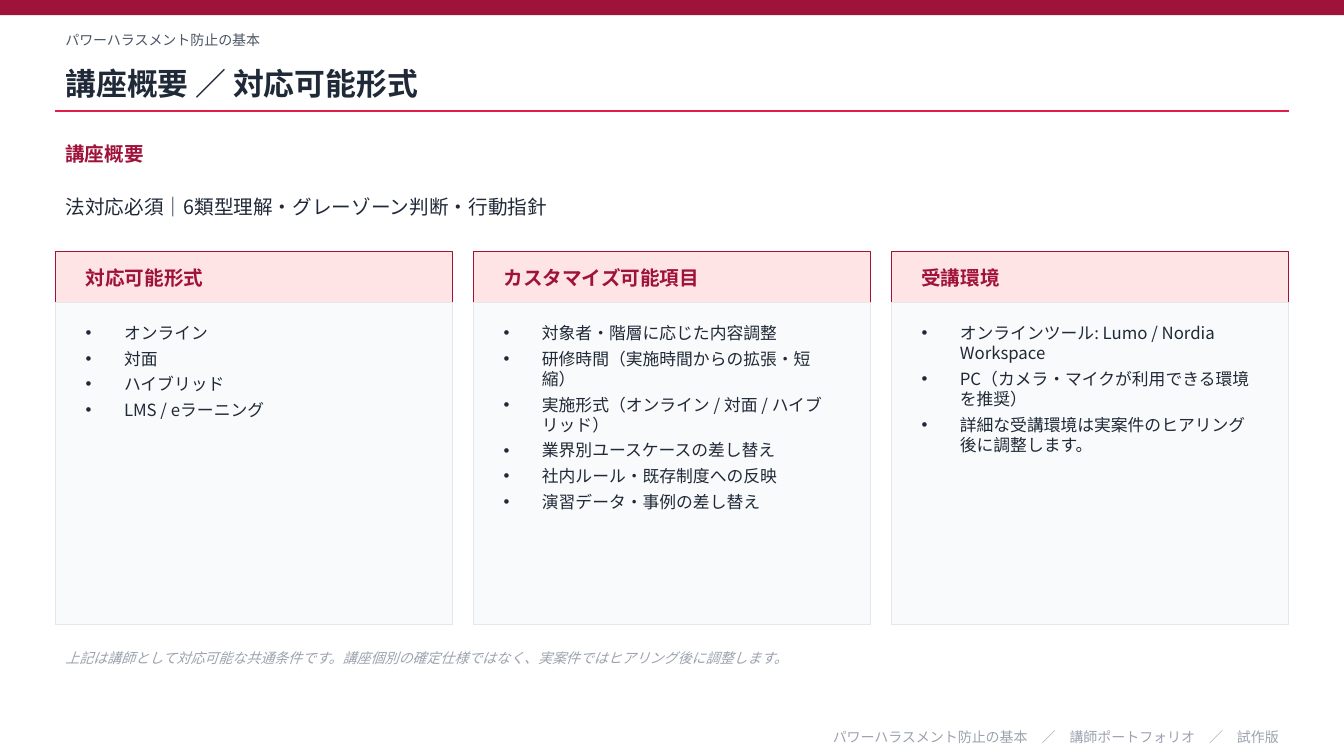
from lxml.etree import SubElement
from pptx import Presentation
from pptx.dml.color import RGBColor
from pptx.enum.shapes import MSO_CONNECTOR as Connector, MSO_SHAPE as Preset
from pptx.enum.text import MSO_ANCHOR as Anchor, MSO_AUTO_SIZE as AutoSize, PP_ALIGN as Align
from pptx.oxml.ns import qn
from pptx.util import Inches, Pt

FONT = "Noto Sans CJK JP"
CRIMSON = RGBColor(0x9F, 0x12, 0x39)
ROSE = RGBColor(0xE1, 0x1D, 0x48)
PINK = RGBColor(0xFF, 0xE4, 0xE6)
INK = RGBColor(0x1F, 0x29, 0x37)
SLATE = RGBColor(0x4B, 0x55, 0x63)
MUTED = RGBColor(0x9C, 0xA3, 0xAF)
PANEL = RGBColor(0xF9, 0xFA, 0xFB)
BORDER = RGBColor(0xE5, 0xE7, 0xEB)

LEFT, WIDTH = 0.55, 12.23
CARD_WIDTH, CARD_GAP, CARD_INSET = 3.94, 0.205, 0.2

presentation = Presentation()
presentation.slide_width = Inches(13.33)
presentation.slide_height = Inches(7.5)
slide = presentation.slides.add_slide(presentation.slide_layouts.get_by_name("Comparison"))
title, overview, *lists = slide.placeholders


def write_text(lines, box, placeholder=None, size=14, color=INK, bold=False, italic=False,
               align=Align.LEFT, anchor=Anchor.MIDDLE, bullets=False):
    left, top, width, height = map(Inches, box)
    if placeholder is None:
        shape = slide.shapes.add_textbox(left, top, width, height)
    else:
        shape = placeholder
        shape.left, shape.top, shape.width, shape.height = left, top, width, height
        shape.element.getparent().append(shape.element)
    frame = shape.text_frame
    frame.text = "\n".join(lines)
    frame.word_wrap = True
    frame.auto_size = AutoSize.NONE
    frame.vertical_anchor = anchor
    for paragraph in frame.paragraphs:
        paragraph.alignment = align
        paragraph.space_before = Pt(0)
        if bullets:
            paragraph.space_after = Pt(4)
            properties = paragraph._p.get_or_add_pPr()
            properties.set("marL", str(Inches(0.38)))
            properties.set("indent", str(Inches(-0.38)))
            SubElement(properties, qn("a:buChar"), char="•")
        for run in paragraph.runs:
            font = run.font
            font.size, font.bold, font.italic = Pt(size), bold, italic
            font.color.rgb = color
            font.name = FONT
            SubElement(run._r.get_or_add_rPr(), qn("a:ea"), typeface=FONT)


def add_block(box, fill, line=None):
    shape = slide.shapes.add_shape(Preset.RECTANGLE, *map(Inches, box))
    shape.shadow.inherit = False
    shape.fill.solid()
    shape.fill.fore_color.rgb = fill
    if line is None:
        shape.line.fill.background()
    else:
        shape.line.color.rgb = line
        shape.line.width = Pt(0.75)


add_block((0, 0, 13.33, 0.15), CRIMSON)
write_text(["パワーハラスメント防止の基本"], (LEFT, 0.25, WIDTH, 0.3), size=10, color=SLATE)
write_text(["講座概要 ／ 対応可能形式"], (LEFT, 0.55, WIDTH, 0.55), placeholder=title, size=22, bold=True)

rule = slide.shapes.add_connector(
    Connector.STRAIGHT, Inches(LEFT), Inches(1.1), Inches(LEFT + WIDTH), Inches(1.1))
rule.line.color.rgb = ROSE
rule.line.width = Pt(1)
SubElement(rule.element.spPr, qn("a:effectLst"))

write_text(["講座概要"], (LEFT, 1.35, WIDTH, 0.35), color=CRIMSON, bold=True)
write_text(["法対応必須｜6類型理解・グレーゾーン判断・行動指針"],
           (LEFT, 1.75, WIDTH, 0.6), placeholder=overview)

cards = [
    ("対応可能形式", ["オンライン", "対面", "ハイブリッド", "LMS / eラーニング"]),
    ("カスタマイズ可能項目", [
        "対象者・階層に応じた内容調整",
        "研修時間（実施時間からの拡張・短縮）",
        "実施形式（オンライン / 対面 / ハイブリッド）",
        "業界別ユースケースの差し替え",
        "社内ルール・既存制度への反映",
        "演習データ・事例の差し替え",
    ]),
    ("受講環境", [
        "オンラインツール: Lumo / Nordia Workspace",
        "PC（カメラ・マイクが利用できる環境を推奨）",
        "詳細な受講環境は実案件のヒアリング後に調整します。",
    ]),
]
for index, ((heading, items), placeholder) in enumerate(zip(cards, lists)):
    card_left = LEFT + index * (CARD_WIDTH + CARD_GAP)
    text_left, text_width = card_left + CARD_INSET, CARD_WIDTH - 2 * CARD_INSET
    add_block((card_left, 2.5, CARD_WIDTH, 0.5), PINK, CRIMSON)
    write_text([heading], (text_left, 2.5, text_width, 0.5), color=CRIMSON, bold=True)
    add_block((card_left, 3, CARD_WIDTH, 3.2), PANEL, BORDER)
    write_text(items, (text_left, 3.15, text_width, 2.85), placeholder=placeholder,
               size=12, anchor=Anchor.TOP, bullets=True)

write_text(["上記は講師として対応可能な共通条件です。講座個別の確定仕様ではなく、実案件ではヒアリング後に調整します。"],
           (LEFT, 6.35, WIDTH, 0.35), size=10, color=MUTED, italic=True)
write_text(["パワーハラスメント防止の基本　／　講師ポートフォリオ　／　試作版"],
           (LEFT, 7.2, WIDTH, 0.22), size=10, color=MUTED, align=Align.RIGHT)

presentation.save("out.pptx")
